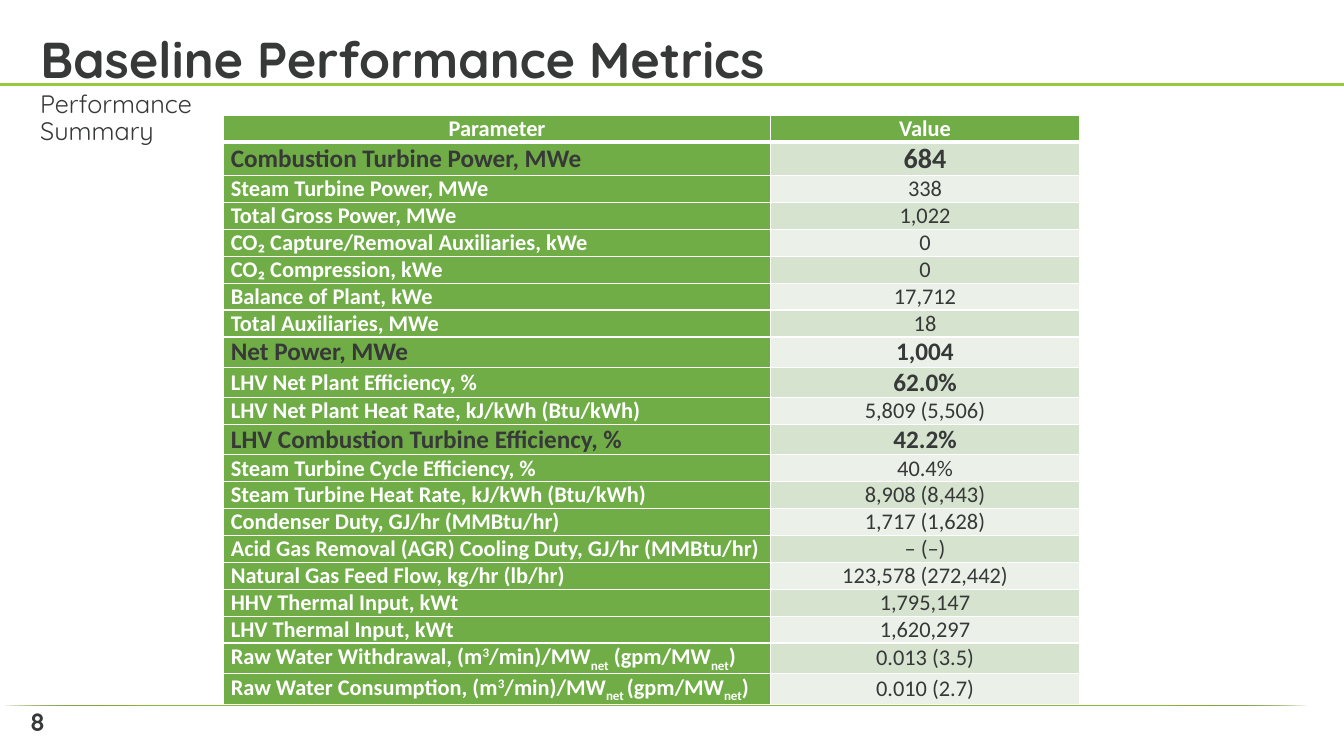
import math

import lxml.etree
import pptx
import pptx.dml.color
import pptx.enum.shapes
import pptx.enum.text
import pptx.oxml
import pptx.oxml.ns
import pptx.util

WIDTH, HEIGHT = 13.33, 7.5
COLORS = {
    "ink": "373838", "white": "FFFFFF", "lime": "98C93D", "moss": "648725",
    "header": "70AD47", "odd_band": "D5E3CF", "even_band": "EBF1E9",
}
BODY, STRONG, LARGE = 16, 18, 20
SCRIPT_BASELINES = {"^": "30000", "_": "-25000"}
METRICS = [
    ("Combustion Turbine Power, MWe", "684", STRONG, LARGE),
    ("Steam Turbine Power, MWe", "338", BODY, BODY),
    ("Total Gross Power, MWe", "1,022", BODY, BODY),
    ("CO₂ Capture/Removal Auxiliaries, kWe", "0", BODY, BODY),
    ("CO₂ Compression, kWe", "0", BODY, BODY),
    ("Balance of Plant, kWe", "17,712", BODY, BODY),
    ("Total Auxiliaries, MWe", "18", BODY, BODY),
    ("Net Power, MWe", "1,004", STRONG, STRONG),
    ("LHV Net Plant Efficiency, %", "62.0%", BODY, STRONG),
    ("LHV Net Plant Heat Rate, kJ/kWh (Btu/kWh)", "5,809 (5,506)", BODY, BODY),
    ("LHV Combustion Turbine Efficiency, %", "42.2%", STRONG, STRONG),
    ("Steam Turbine Cycle Efficiency, %", "40.4%", BODY, BODY),
    ("Steam Turbine Heat Rate, kJ/kWh (Btu/kWh)", "8,908 (8,443)", BODY, BODY),
    ("Condenser Duty, GJ/hr (MMBtu/hr)", "1,717 (1,628)", BODY, BODY),
    ("Acid Gas Removal (AGR) Cooling Duty, GJ/hr (MMBtu/hr)", "– (–)", BODY, BODY),
    ("Natural Gas Feed Flow, kg/hr (lb/hr)", "123,578 (272,442)", BODY, BODY),
    ("HHV Thermal Input, kWt", "1,795,147", BODY, BODY),
    ("LHV Thermal Input, kWt", "1,620,297", BODY, BODY),
    ("Raw Water Withdrawal, (m|^3|/min)/MW|_net| (gpm/MW|_net|)", "0.013 (3.5)", BODY, BODY),
    ("Raw Water Consumption, (m|^3|/min)/MW|_net |(gpm/MW|_net|)", "0.010 (2.7)", BODY, BODY),
]


def inches(*lengths):
    """Convert lengths in inches to slide units."""
    return [pptx.util.Inches(length) for length in lengths]


def rgb(name):
    """Look up a named colour."""
    return pptx.dml.color.RGBColor.from_string(COLORS[name])


def style(paragraph, size, color, bold, face):
    """Set the font of a paragraph."""
    font = paragraph.font
    font.name, font.size, font.bold = face, pptx.util.Pt(size), bold
    font.color.rgb = rgb(color)


def add_rule(slide):
    """Draw the full-width line under the title."""
    rule = slide.shapes.add_connector(
        pptx.enum.shapes.MSO_CONNECTOR.STRAIGHT, *inches(0, 0.84, WIDTH, 0.84))
    rule.line.color.rgb = rgb("lime")
    rule.line.width = pptx.util.Pt(2)
    lxml.etree.SubElement(rule._element.spPr, pptx.oxml.ns.qn("a:effectLst"))


def add_footer_band(slide):
    """Draw the bottom strip that rises into a rounded tab at the right."""
    tab_left, tab_top, strip_top, bottom, radius = 11.6, 6.74, 7.33, 7.38, 0.1
    angles = [math.radians(90 + 15 * step) for step in range(7)]
    corner = [(tab_left + radius * (1 + math.cos(angle)),
               tab_top + radius * (1 - math.sin(angle))) for angle in angles]
    outline = corner + [(tab_left, strip_top), (0, strip_top), (0, bottom), (WIDTH, bottom)]
    builder = slide.shapes.build_freeform(WIDTH, tab_top, scale=pptx.util.Inches(1))
    builder.add_line_segments(outline, close=True)
    band = builder.convert_to_shape()
    band.shadow.inherit = False
    band.line.fill.background()
    gradient = pptx.oxml.parse_xml(
        f'<a:gradFill {pptx.oxml.ns.nsdecls("a")} rotWithShape="1"><a:gsLst>'
        f'<a:gs pos="76000"><a:srgbClr val="{COLORS["lime"]}"/></a:gs>'
        f'<a:gs pos="100000"><a:srgbClr val="{COLORS["moss"]}"/></a:gs></a:gsLst>'
        '<a:path path="circle"><a:fillToRect l="50000" t="50000" r="50000" b="50000"/>'
        '</a:path></a:gradFill>')
    band._element.spPr.find(pptx.oxml.ns.qn("a:custGeom")).addnext(gradient)


def set_title(slide, text):
    """Place and format the title placeholder."""
    title = slide.shapes.title
    title.left, title.top, title.width, title.height = inches(0.3, 0.28, 12.67, 0.66)
    title.text_frame.text = text
    title.text_frame.auto_size = pptx.enum.text.MSO_AUTO_SIZE.NONE
    title.text_frame.vertical_anchor = pptx.enum.text.MSO_ANCHOR.BOTTOM
    paragraph = title.text_frame.paragraphs[0]
    paragraph.alignment = pptx.enum.text.PP_ALIGN.LEFT
    paragraph.line_spacing = 0.9
    style(paragraph, 36, "ink", True, "Quicksand")


def add_label(slide, text, box, bold, wrap):
    """Add a line of text beside the table."""
    label = slide.shapes.add_textbox(*inches(*box)).text_frame
    label.word_wrap = wrap
    label.text = text
    paragraph = label.paragraphs[0]
    paragraph.line_spacing = 0.9 if wrap else 1.0
    style(paragraph, 18, "ink", bold, "Quicksand")


def add_borders(cell, bottom_width):
    """Give a cell white borders."""
    properties = cell._tc.get_or_add_tcPr()
    for side, width in zip("LRTB", (1, 1, 1, bottom_width)):
        properties.append(pptx.oxml.parse_xml(
            f'<a:ln{side} {pptx.oxml.ns.nsdecls("a")} w="{pptx.util.Pt(width)}"><a:solidFill>'
            f'<a:srgbClr val="{COLORS["white"]}"/></a:solidFill></a:ln{side}>'))


def fill_cell(cell, text, fill, size, color, bold, centred, bottom_width=1):
    """Write a cell, raising parts marked ^ and lowering parts marked _."""
    add_borders(cell, bottom_width)
    cell.fill.solid()
    cell.fill.fore_color.rgb = rgb(fill)
    cell.margin_left = cell.margin_right = pptx.util.Inches(0.07)
    cell.margin_top = cell.margin_bottom = 0
    cell.vertical_anchor = pptx.enum.text.MSO_ANCHOR.MIDDLE
    paragraph = cell.text_frame.paragraphs[0]
    alignments = pptx.enum.text.PP_ALIGN
    paragraph.alignment = alignments.CENTER if centred else alignments.LEFT
    style(paragraph, size, color, bold, "Calibri")
    for part in text.split("|"):
        run = paragraph.add_run()
        run.text = part.lstrip("^_")
        if part[0] in SCRIPT_BASELINES:
            run._r.get_or_add_rPr().set("baseline", SCRIPT_BASELINES[part[0]])


def add_metrics_table(slide):
    """Build the table of parameters and values."""
    row_count, row_height = len(METRICS) + 1, 0.23
    table = slide.shapes.add_table(
        row_count, 2, *inches(2.22, 1.14, 8.49, row_count * row_height)).table
    table.horz_banding = False
    table.columns[0].width, table.columns[1].width = inches(5.42, 3.07)
    for row in table.rows:
        row.height = pptx.util.Inches(row_height)
    for column, heading in enumerate(("Parameter", "Value")):
        fill_cell(table.cell(0, column), heading, "header", BODY, "white", True, True, 3)
    for row, (parameter, value, parameter_size, value_size) in enumerate(METRICS, 1):
        parameter_color = "ink" if parameter_size > BODY else "white"
        band = "odd_band" if row % 2 else "even_band"
        fill_cell(table.cell(row, 0), parameter, "header", parameter_size,
                  parameter_color, True, False)
        fill_cell(table.cell(row, 1), value, band, value_size, "ink", value_size > BODY, True)


def main():
    """Build and save the slide."""
    deck = pptx.Presentation()
    deck.slide_width, deck.slide_height = inches(WIDTH, HEIGHT)
    slide = deck.slides.add_slide(deck.slide_layouts[5])
    add_rule(slide)
    add_footer_band(slide)
    add_label(slide, "8", (0.2, 6.96, 0.48, 0.4), True, False)
    set_title(slide, "Baseline Performance Metrics")
    add_label(slide, "Performance \vSummary", (0.3, 0.86, 12.67, 0.41), False, True)
    add_metrics_table(slide)
    deck.save("out.pptx")


if __name__ == "__main__":
    main()
